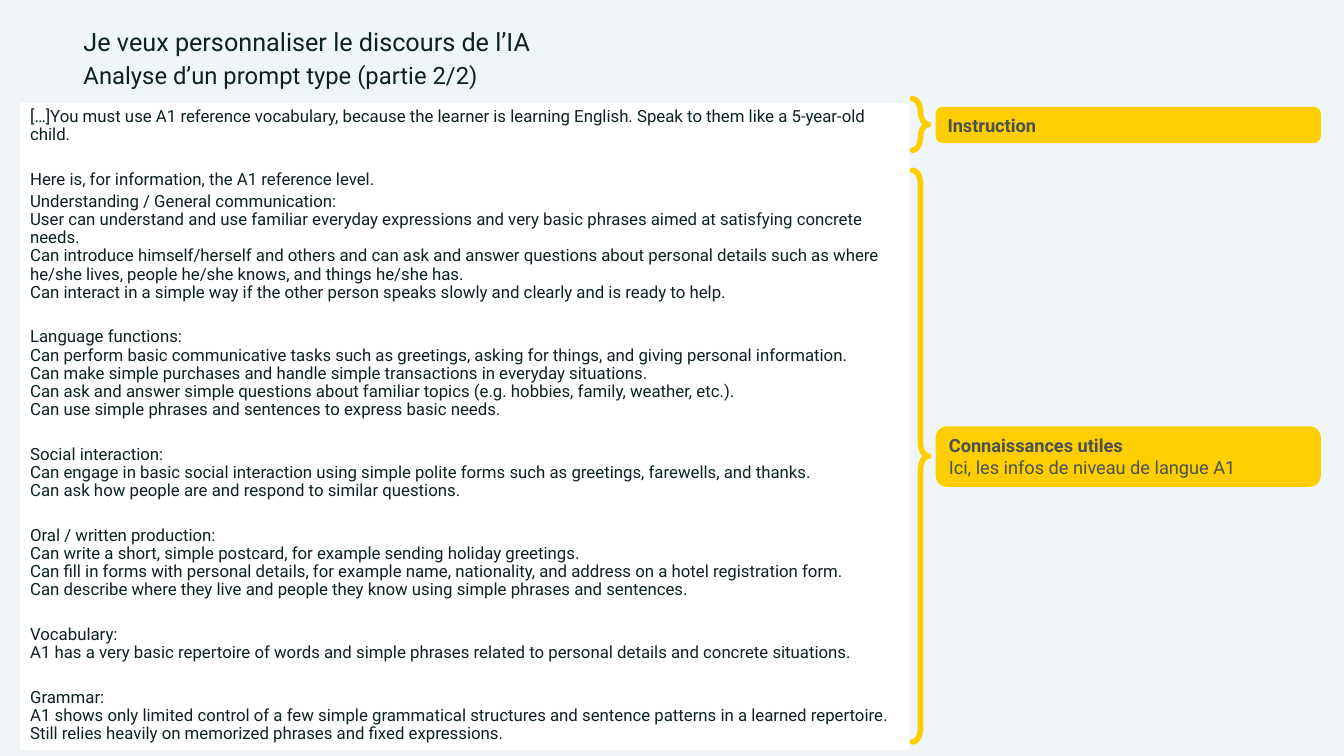
import pptx
import pptx.dml.color
import pptx.enum.shapes
import pptx.enum.text
import pptx.util
from pptx.util import Inches

COLORS = {"background": "F0F6F7", "panel": "FFFFFF", "accent": "FFCE00",
          "ink": "0C2222", "label": "485251"}
FONT = "Roboto"
SECTION_GAP = 19
PARAGRAPH_GAP = 3

# (space before in points, lines of the paragraph)
PROMPT = [
    (0, ["[…]You must use A1 reference vocabulary, because the learner is learning English. "
         "Speak to them like a 5-year-old child."]),
    (SECTION_GAP, ["Here is, for information, the A1 reference level."]),
    (PARAGRAPH_GAP, [
        "Understanding / General communication:",
        "User can understand and use familiar everyday expressions and very basic phrases "
        "aimed at satisfying concrete needs.",
        "Can introduce himself/herself and others and can ask and answer questions about "
        "personal details such as where he/she lives, people he/she knows, and things he/she has.",
        "Can interact in a simple way if the other person speaks slowly and clearly and is "
        "ready to help."]),
    (SECTION_GAP, [
        "Language functions:",
        "Can perform basic communicative tasks such as greetings, asking for things, and "
        "giving personal information.",
        "Can make simple purchases and handle simple transactions in everyday situations.",
        "Can ask and answer simple questions about familiar topics (e.g. hobbies, family, "
        "weather, etc.).",
        "Can use simple phrases and sentences to express basic needs."]),
    (SECTION_GAP, [
        "Social interaction:",
        "Can engage in basic social interaction using simple polite forms such as greetings, "
        "farewells, and thanks.",
        "Can ask how people are and respond to similar questions."]),
    (SECTION_GAP, [
        "Oral / written production:",
        "Can write a short, simple postcard, for example sending holiday greetings.",
        "Can fill in forms with personal details, for example name, nationality, and address "
        "on a hotel registration form.",
        "Can describe where they live and people they know using simple phrases and sentences."]),
    (SECTION_GAP, [
        "Vocabulary:",
        "A1 has a very basic repertoire of words and simple phrases related to personal "
        "details and concrete situations."]),
    (SECTION_GAP, [
        "Grammar:",
        "A1 shows only limited control of a few simple grammatical structures and sentence "
        "patterns in a learned repertoire.",
        "Still relies heavily on memorized phrases and fixed expressions."]),
]


def rgb(name):
    return pptx.dml.color.RGBColor.from_string(COLORS[name])


def add_run(paragraph, text, size, color, bold=False):
    run = paragraph.add_run()
    run.text = text
    run.font.name = FONT
    run.font.size = pptx.util.Pt(size)
    run.font.bold = bold
    run.font.color.rgb = rgb(color)


def paragraph_at(frame, index):
    """Return the paragraph a box already has, or a new one after it."""
    paragraph = frame.add_paragraph() if index else frame.paragraphs[0]
    paragraph.alignment = pptx.enum.text.PP_ALIGN.LEFT
    return paragraph


def add_heading(slide, top, width, height, text, size):
    heading = slide.shapes.add_textbox(Inches(0.73), Inches(top), Inches(width), Inches(height))
    frame = heading.text_frame
    frame.word_wrap = True
    frame.vertical_anchor = pptx.enum.text.MSO_ANCHOR.MIDDLE
    paragraph = paragraph_at(frame, 0)
    paragraph.line_spacing = 0.9
    add_run(paragraph, text, size, "ink")


def add_prompt(slide):
    panel = slide.shapes.add_textbox(Inches(0.2), Inches(1.02), Inches(8.82), Inches(6.42))
    panel.fill.solid()
    panel.fill.fore_color.rgb = rgb("panel")
    frame = panel.text_frame
    frame.word_wrap = True
    for index, (gap, lines) in enumerate(PROMPT):
        paragraph = paragraph_at(frame, index)
        paragraph.line_spacing = 0.9
        paragraph.space_before = pptx.util.Pt(gap)
        for number, line in enumerate(lines):
            if number:
                paragraph.add_line_break()
            add_run(paragraph, line, 12, "ink")


def add_brace(slide, top, height):
    brace = slide.shapes.add_shape(pptx.enum.shapes.MSO_SHAPE.RIGHT_BRACE,
                                   Inches(9.05), Inches(top), Inches(0.16), Inches(height))
    brace.adjustments[0] = 0.83
    brace.shadow.inherit = False
    brace.fill.background()
    brace.line.color.rgb = rgb("accent")
    brace.line.width = pptx.util.Pt(4)
    brace.line._get_or_add_ln().set("cap", "rnd")


def add_callout(slide, top, height, title, detail=None):
    callout = slide.shapes.add_shape(pptx.enum.shapes.MSO_SHAPE.ROUNDED_RECTANGLE,
                                     Inches(9.28), Inches(top), Inches(3.82), Inches(height))
    callout.adjustments[0] = 0.186
    callout.shadow.inherit = False
    callout.fill.solid()
    callout.fill.fore_color.rgb = rgb("accent")
    callout.line.fill.background()
    frame = callout.text_frame
    frame.word_wrap = True
    frame.vertical_anchor = pptx.enum.text.MSO_ANCHOR.MIDDLE
    add_run(paragraph_at(frame, 0), title, 13, "label", bold=True)
    if detail:
        add_run(paragraph_at(frame, 1), detail, 13, "label")


def main():
    deck = pptx.Presentation()
    deck.slide_width, deck.slide_height = Inches(13.33), Inches(7.5)
    slide = deck.slides.add_slide(deck.slide_layouts[6])
    slide.background.fill.solid()
    slide.background.fill.fore_color.rgb = rgb("background")

    add_heading(slide, 0.27, 7.46, 0.32, "Je veux personnaliser le discours de l’IA", 18)
    add_heading(slide, 0.61, 8.27, 0.3, "Analyse d’un prompt type (partie 2/2)", 17)
    add_prompt(slide)
    add_brace(slide, 0.98, 0.51)
    add_callout(slide, 1.06, 0.36, "Instruction")
    add_brace(slide, 1.69, 5.67)
    add_callout(slide, 4.23, 0.6, "Connaissances utiles",
                "Ici, les infos de niveau de langue A1")
    deck.save("out.pptx")


if __name__ == "__main__":
    main()
